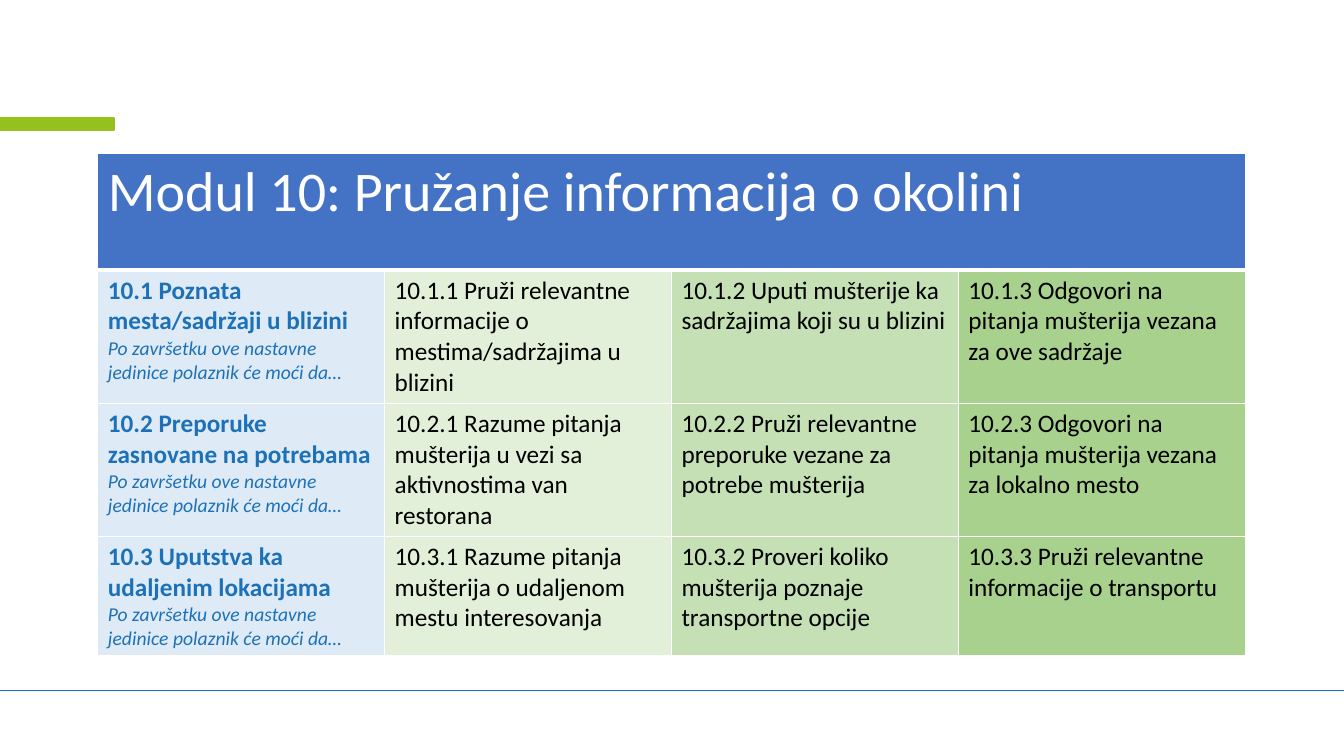
from lxml import etree
from pptx import Presentation
from pptx.dml.color import RGBColor
from pptx.enum import shapes
from pptx.oxml.ns import qn
from pptx.util import Inches, Pt

WHITE = RGBColor(0xFF, 0xFF, 0xFF)
BLACK = RGBColor(0x00, 0x00, 0x00)
BLUE = RGBColor(0x1D, 0x71, 0xB8)
LIME = RGBColor(0x95, 0xC1, 0x1F)
HEADER = RGBColor(0x44, 0x72, 0xC4)
COLUMN_FILLS = [RGBColor(0xDE, 0xEB, 0xF7), RGBColor(0xE2, 0xF0, 0xD9),
                RGBColor(0xC5, 0xE0, 0xB4), RGBColor(0xA9, 0xD1, 0x8E)]

TITLE = "Modul 10: Pružanje informacija o okolini"
INTRO = "Po završetku ove nastavne jedinice polaznik će moći da…"
UNITS = [
    ["10.1 Poznata mesta/sadržaji u blizini",
     "10.1.1 Pruži relevantne informacije o mestima/sadržajima u blizini",
     "10.1.2 Uputi mušterije ka sadržajima koji su u blizini",
     "10.1.3 Odgovori na pitanja mušterija vezana za ove sadržaje"],
    ["10.2 Preporuke zasnovane na potrebama",
     "10.2.1 Razume pitanja mušterija u vezi sa aktivnostima van restorana",
     "10.2.2 Pruži relevantne preporuke vezane za potrebe mušterija",
     "10.2.3 Odgovori na pitanja mušterija vezana za lokalno mesto"],
    ["10.3 Uputstva ka udaljenim lokacijama",
     "10.3.1 Razume pitanja mušterija o udaljenom mestu interesovanja",
     "10.3.2 Proveri koliko mušterija poznaje transportne opcije",
     "10.3.3 Pruži relevantne informacije o transportu"],
]


def write(p, text, size=18, color=BLACK, bold=False, italic=False):
    r = p.add_run()
    r.text = text
    r.font.name = "Calibri"
    r.font.size = Pt(size)
    r.font.color.rgb = color
    r.font.bold = bold
    r.font.italic = italic


def style_cell(cell, fill, bottom=1):
    """Fill a cell and give it white borders, with widths in points."""
    cell.fill.solid()
    cell.fill.fore_color.rgb = fill
    tc_pr = cell._tc.get_or_add_tcPr()
    for i, (side, width) in enumerate(zip("LRTB", (1, 1, 1, bottom))):
        ln = etree.Element(qn(f"a:ln{side}"), w=str(Pt(width)))
        solid = etree.SubElement(ln, qn("a:solidFill"))
        etree.SubElement(solid, qn("a:srgbClr"), val=str(WHITE))
        tc_pr.insert(i, ln)  # borders come before the fill


prs = Presentation()
prs.slide_width, prs.slide_height = Inches(13.33), Inches(7.5)
s = prs.slides.add_slide(prs.slide_layouts[6])

footer_line = s.shapes.add_connector(
    shapes.MSO_CONNECTOR.STRAIGHT, 0, Inches(6.85), prs.slide_width, Inches(6.85))
footer_line.line.color.rgb = BLUE
footer_line.line.width = Pt(1)
etree.SubElement(footer_line._element.spPr, qn("a:effectLst"))

accent = s.shapes.add_shape(
    shapes.MSO_SHAPE.RECTANGLE, 0, Inches(1.17), Inches(1.13), Inches(0.12))
accent.shadow.inherit = False
accent.fill.solid()
accent.fill.fore_color.rgb = LIME
accent.line.color.rgb = LIME
accent.line.width = Pt(1)

table = s.shapes.add_table(
    len(UNITS) + 1, len(COLUMN_FILLS),
    Inches(0.97), Inches(1.52), Inches(11.38), Inches(4.64)).table
for row in table.rows:
    row.height = Inches(1.16)

for col in range(len(COLUMN_FILLS)):
    style_cell(table.cell(0, col), HEADER, bottom=3)
title = table.cell(0, 0)
title.merge(table.cell(0, len(COLUMN_FILLS) - 1))
write(title.text_frame.paragraphs[0], TITLE, size=40, color=WHITE)

for row, unit in enumerate(UNITS, start=1):
    for col, (text, fill) in enumerate(zip(unit, COLUMN_FILLS)):
        cell = table.cell(row, col)
        style_cell(cell, fill)
        tf = cell.text_frame
        if col == 0:
            write(tf.paragraphs[0], text, color=BLUE, bold=True)
            write(tf.add_paragraph(), INTRO, size=14, color=BLUE, italic=True)
        else:
            write(tf.paragraphs[0], text)

prs.save("out.pptx")
